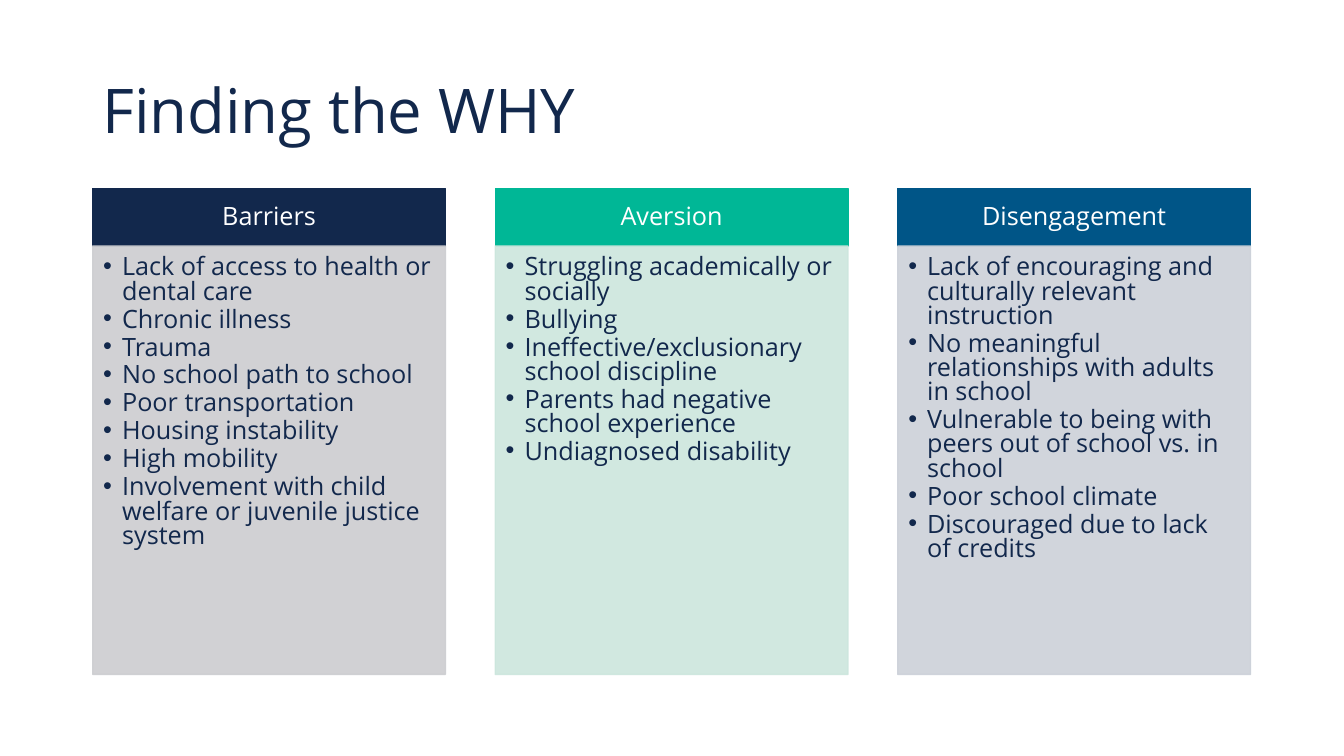
from dataclasses import dataclass

from lxml import etree
from pptx import Presentation
from pptx.dml.color import RGBColor
from pptx.enum.shapes import MSO_SHAPE
from pptx.enum.text import MSO_ANCHOR, MSO_AUTO_SIZE, PP_ALIGN
from pptx.oxml.ns import qn
from pptx.shapes.autoshape import Shape
from pptx.slide import Slide
from pptx.text.text import TextFrame
from pptx.util import Pt

RECT = MSO_SHAPE.RECTANGLE
TOP, MIDDLE = MSO_ANCHOR.TOP, MSO_ANCHOR.MIDDLE
LEFT, CENTER = PP_ALIGN.LEFT, PP_ALIGN.CENTER
NO_FIT = MSO_AUTO_SIZE.NONE


@dataclass(frozen=True)
class Theme:
    font: str = "Open Sans"
    navy: str = "12284C"
    green: str = "00B796"
    blue: str = "005587"
    white: str = "FFFFFF"
    pale_gray: str = "CCCDD0"
    pale_green: str = "CCE6DD"
    pale_blue: str = "CCD1D9"
    body_alpha: int = 90
    title_size: float = 44
    text_size: float = 18


@dataclass(frozen=True)
class Column:
    heading: str
    color: str
    body_color: str
    reasons: tuple[str, ...]


THEME = Theme()
COLUMN_LEFT, COLUMN_STEP, COLUMN_WIDTH = 66.24, 287.52, 252
HEADER_TOP, HEADER_HEIGHT, BODY_HEIGHT = 134.64, 41.04, 306
BULLET_INDENT = 13.5

COLUMNS = (
    Column("Barriers", THEME.navy, THEME.pale_gray, (
        "Lack of access to health or dental care",
        "Chronic illness",
        "Trauma",
        "No school path to school",
        "Poor transportation",
        "Housing instability",
        "High mobility",
        "Involvement with child welfare or juvenile justice system",
    )),
    Column("Aversion", THEME.green, THEME.pale_green, (
        "Struggling academically or socially",
        "Bullying",
        "Ineffective/exclusionary school discipline",
        "Parents had negative school experience",
        "Undiagnosed disability",
    )),
    Column("Disengagement", THEME.blue, THEME.pale_blue, (
        "Lack of encouraging and culturally relevant instruction",
        "No meaningful relationships with adults in school",
        "Vulnerable to being with peers out of school vs. in school",
        "Poor school climate",
        "Discouraged due to lack of credits",
    )),
)


def set_attrs(target: object, values: dict) -> None:
    for name, value in values.items():
        setattr(target, name, value)


def set_frame(tf: TextFrame, anchor: MSO_ANCHOR,
              insets: tuple[float, float, float, float]) -> None:
    left, top, right, bottom = map(Pt, insets)
    set_attrs(tf, {
        "word_wrap": True, "auto_size": NO_FIT, "vertical_anchor": anchor,
        "margin_left": left, "margin_top": top,
        "margin_right": right, "margin_bottom": bottom,
    })


def write_lines(tf: TextFrame, lines: tuple[str, ...], size: float, color: str,
                align: PP_ALIGN, spacing: float, after: float = 0,
                bullet: bool = False) -> None:
    for i, line in enumerate(lines):
        p = tf.paragraphs[0] if i == 0 else tf.add_paragraph()
        set_attrs(p, {"alignment": align, "line_spacing": spacing,
                      "space_before": Pt(0), "space_after": Pt(after)})
        if bullet:
            p.level = 1
            pPr = p._p.get_or_add_pPr()
            pPr.set("marL", str(Pt(BULLET_INDENT)))
            pPr.set("indent", str(-Pt(BULLET_INDENT)))
            etree.SubElement(pPr, qn("a:buFont")).set("typeface", "Arial")
            etree.SubElement(pPr, qn("a:buChar")).set("char", "•")
        r = p.add_run()
        r.text = line
        set_attrs(r.font, {"name": THEME.font, "size": Pt(size)})
        r.font.color.rgb = RGBColor.from_string(color)


def add_panel(s: Slide, left: float, top: float, height: float, color: str,
              alpha: int = 100) -> Shape:
    sp = s.shapes.add_shape(RECT, Pt(left), Pt(top), Pt(COLUMN_WIDTH), Pt(height))
    sp.shadow.inherit = False
    sp.line.width = Pt(1)
    for fill in (sp.fill, sp.line.fill):
        fill.solid()
        fill.fore_color.rgb = RGBColor.from_string(color)
    if alpha < 100:
        for clr in sp._element.spPr.iter(qn("a:srgbClr")):
            etree.SubElement(clr, qn("a:alpha")).set("val", str(alpha * 1000))
    return sp


def add_column(s: Slide, column: Column, left: float) -> None:
    header = add_panel(s, left, HEADER_TOP, HEADER_HEIGHT, column.color)
    set_frame(header.text_frame, MIDDLE, (10, 5.76, 10, 5.76))
    write_lines(header.text_frame, (column.heading,), THEME.text_size,
                THEME.white, CENTER, 0.9)

    body = add_panel(s, left, HEADER_TOP + HEADER_HEIGHT, BODY_HEIGHT,
                     column.body_color, THEME.body_alpha)
    set_frame(body.text_frame, TOP, (7.5, 7.5, 10, 11.25))
    write_lines(body.text_frame, column.reasons, THEME.text_size, THEME.navy,
                LEFT, 0.8, after=2.7, bullet=True)


def add_title(s: Slide, text: str) -> None:
    title = s.shapes.title
    set_attrs(title, {"left": Pt(66), "top": Pt(28.75),
                      "width": Pt(828), "height": Pt(104.4)})
    set_frame(title.text_frame, MIDDLE, (7.2, 3.6, 7.2, 3.6))
    write_lines(title.text_frame, (text,), THEME.title_size, THEME.navy, LEFT, 0.9)


def main() -> None:
    prs = Presentation()
    set_attrs(prs, {"slide_width": Pt(960), "slide_height": Pt(540)})
    s = prs.slides.add_slide(prs.slide_layouts.get_by_name("Title Only"))
    add_title(s, "Finding the WHY")
    for i, column in enumerate(COLUMNS):
        add_column(s, column, COLUMN_LEFT + i * COLUMN_STEP)
    prs.save("out.pptx")


if __name__ == "__main__":
    main()
